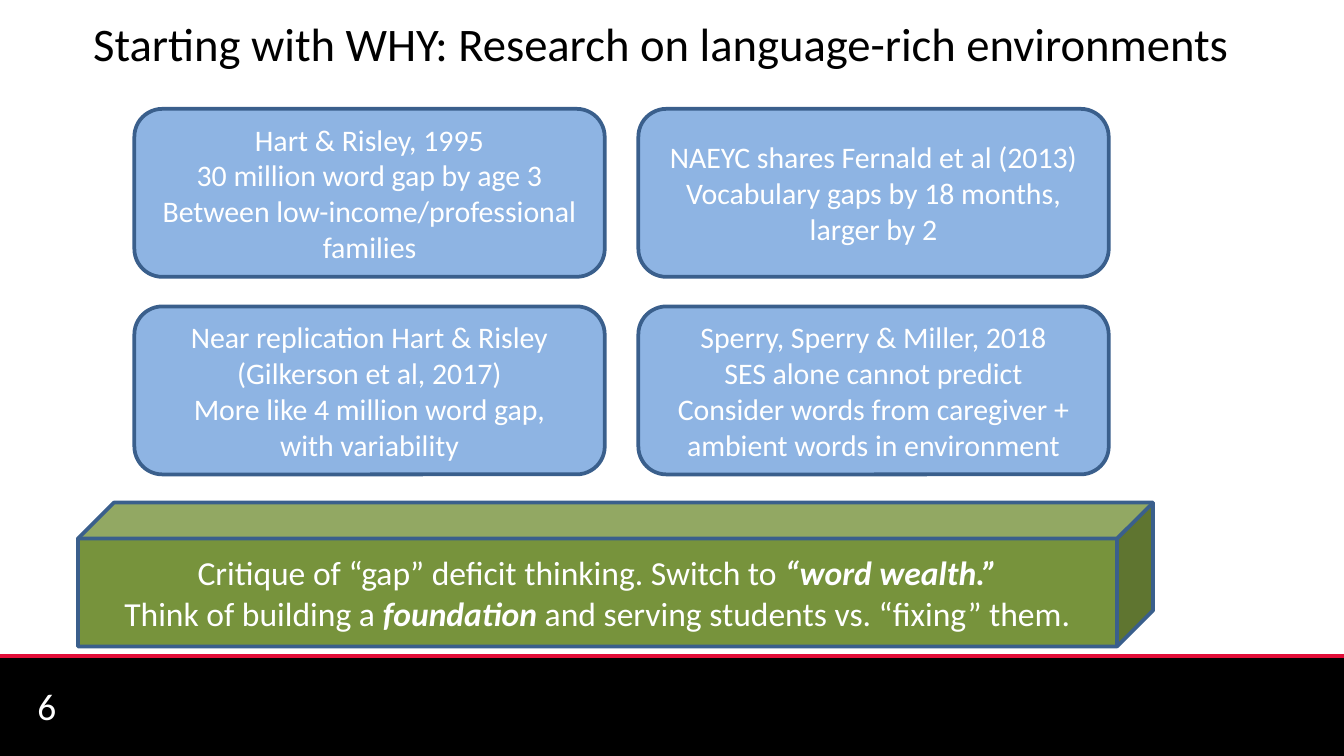
from itertools import product
from lxml.etree import SubElement
from pptx import Presentation
from pptx.dml.color import RGBColor
from pptx.enum.shapes import MSO_CONNECTOR, MSO_SHAPE
from pptx.enum.text import MSO_ANCHOR, MSO_AUTO_SIZE, PP_ALIGN
from pptx.oxml.ns import qn
from pptx.util import Inches, Pt

WHITE, BLACK, RED = "FFFFFF", "000000", "E20D38"
BLUE, NAVY, GREEN = "8EB4E3", "3A5F8C", "77933C"

CARDS = [
    ["Hart & Risley, 1995", "30 million word gap by age 3",
     "Between low-income/professional families"],
    ["NAEYC shares Fernald et al (2013)",
     "Vocabulary gaps by 18 months, larger by 2"],
    ["Near replication Hart & Risley", "(Gilkerson et al, 2017)",
     "More like 4 million word gap,", "with variability"],
    ["Sperry, Sperry & Miller, 2018", "SES alone cannot predict",
     "Consider words from caregiver + ambient words in environment"],
]
BASE = [
    [("Critique of “gap” deficit thinking. Switch to ", False),
     ("“word wealth.”", True)],
    [("Think of building a ", False), ("foundation ", True),
     ("and serving students vs. “fixing” them.", False)],
]


def color(code):
    """Turn a hex string into a colour."""
    return RGBColor.from_string(code)


def plain(lines):
    """Turn strings into paragraphs of one regular run each."""
    return [[(line, False)] for line in lines]


def write(frame, paras, size, code=WHITE, align=PP_ALIGN.CENTER):
    """Fill a text frame, run by run; strong runs are bold italic."""
    frame.word_wrap = True
    frame.auto_size = MSO_AUTO_SIZE.NONE
    frame.vertical_anchor = MSO_ANCHOR.MIDDLE
    for i, runs in enumerate(paras):
        para = frame.add_paragraph() if i else frame.paragraphs[0]
        para.alignment = align
        for text, strong in runs:
            run = para.add_run()
            run.text = text
            font = run.font
            font.name, font.size = "Calibri", Pt(size)
            font.bold = font.italic = strong
            font.color.rgb = color(code)


def place(shape, *box):
    """Set left, top, width and height in inches."""
    shape.left, shape.top, shape.width, shape.height = map(Inches, box)


def add_box(slide, kind, box, fill, edge=None):
    """Add a filled shape, outlined if an edge colour is given."""
    shape = slide.shapes.add_shape(kind, *map(Inches, box))
    shape.shadow.inherit = False
    shape.fill.solid()
    shape.fill.fore_color.rgb = color(fill)
    if edge:
        shape.line.color.rgb = color(edge)
        shape.line.width = Pt(2)
    else:
        shape.line.fill.background()
    return shape


def add_foot(slide):
    """Add the black band, its red rule and the page number."""
    add_box(slide, MSO_SHAPE.RECTANGLE, (0, 4.88, 10.01, 0.75), BLACK)
    rule = slide.shapes.add_connector(
        MSO_CONNECTOR.STRAIGHT, *map(Inches, (0, 4.88, 10, 4.88)))
    rule.line.color.rgb = color(RED)
    rule.line.width = Pt(2)
    SubElement(rule.element.spPr, qn("a:effectLst"))
    page = slide.shapes.add_textbox(*map(Inches, (0.18, 5.1, 2.33, 0.3)))
    write(page.text_frame, plain(["6"]), 20, align=PP_ALIGN.LEFT)


def main():
    """Build and save the slide."""
    deck = Presentation()
    deck.slide_width, deck.slide_height = Inches(10), Inches(5.625)
    slide = deck.slides.add_slide(deck.slide_layouts[5])
    add_foot(slide)
    title = slide.shapes.title
    place(title, 0.25, 0.06, 9.33, 0.52)
    write(title.text_frame, plain(
        ["Starting with WHY: Research on language-rich environments"]),
        25, BLACK)
    for (top, left), lines in zip(product((0.81, 2.28), (1, 4.75)), CARDS):
        card = add_box(slide, MSO_SHAPE.ROUNDED_RECTANGLE,
                       (left, top, 3.5, 1.25), BLUE, NAVY)
        write(card.text_frame, plain(lines), 16)
    block = add_box(slide, MSO_SHAPE.CUBE, (0.58, 3.74, 8, 1.07), GREEN, NAVY)
    write(block.text_frame, BASE, 18)
    deck.save("out.pptx")


if __name__ == "__main__":
    main()
